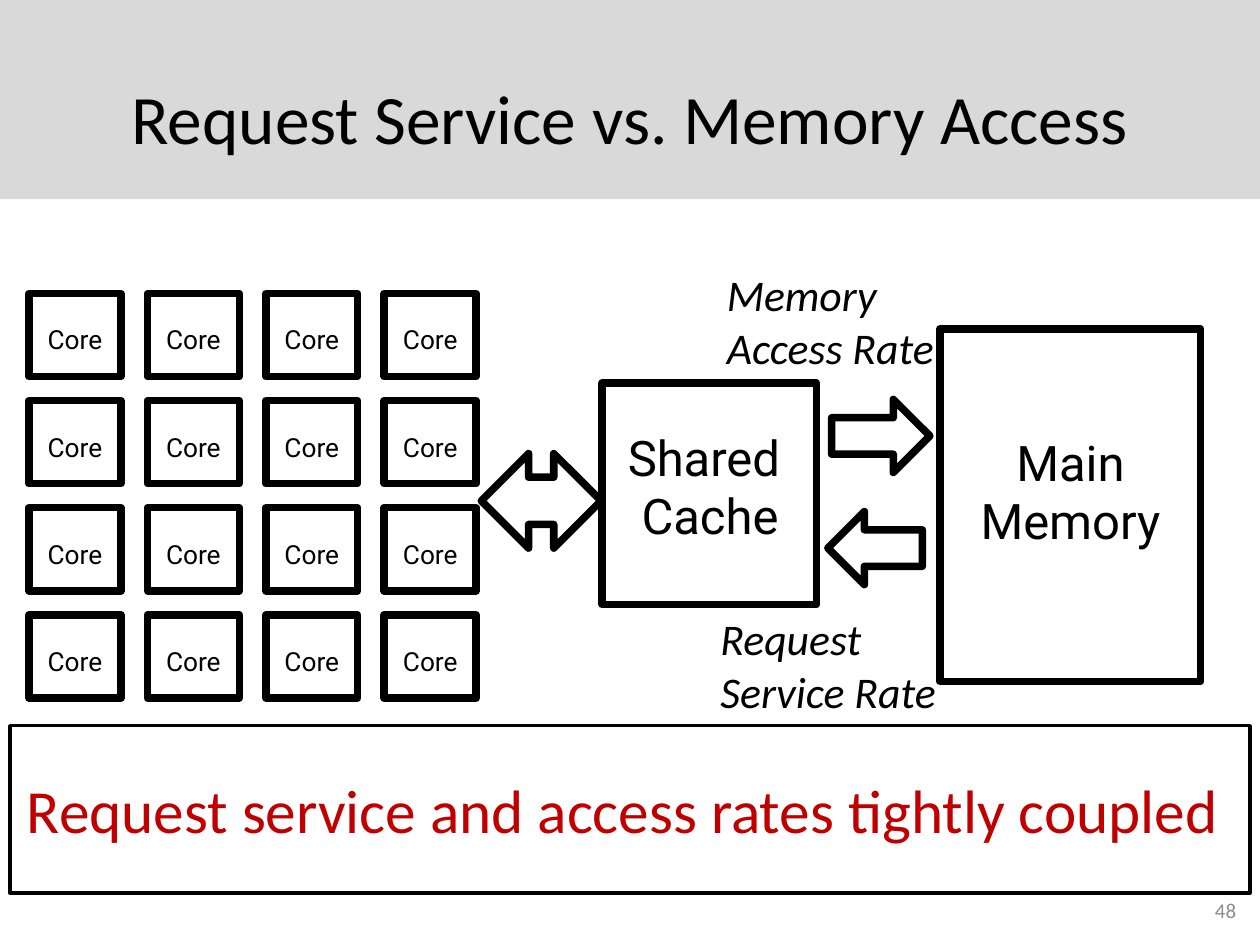
"""Build the slide "Request Service vs. Memory Access"."""
from pptx import Presentation
from pptx.dml.color import RGBColor
from pptx.enum.shapes import MSO_SHAPE
from pptx.enum.text import MSO_ANCHOR, PP_ALIGN
from pptx.util import Inches, Pt

RECT = MSO_SHAPE.RECTANGLE
BOTH_ARROW = MSO_SHAPE.LEFT_RIGHT_ARROW
RIGHT_ARROW = MSO_SHAPE.RIGHT_ARROW
LEFT_ARROW = MSO_SHAPE.LEFT_ARROW
MIDDLE = MSO_ANCHOR.MIDDLE
LEFT, CENTER, RIGHT = PP_ALIGN.LEFT, PP_ALIGN.CENTER, PP_ALIGN.RIGHT
COLORS = {"black": "000000", "white": "FFFFFF", "band": "D9D9D9",
          "red": "C00000", "number": "8C8C8C"}


def add_outline(kind, box, fill=None, line="black", width=4.32):
    sp = s.shapes.add_shape(kind, *map(Inches, box))
    sp.shadow.inherit = False
    if fill:
        sp.fill.solid()
        sp.fill.fore_color.rgb = RGBColor.from_string(COLORS[fill])
    else:
        sp.fill.background()
    if line:
        sp.line.color.rgb = RGBColor.from_string(COLORS[line])
        sp.line.width = Pt(width)
    else:
        sp.line.fill.background()
    return sp


def write_text(sp, text, size, font="Calibri", color="black", align=CENTER, italic=False):
    tf = sp.text_frame
    tf.word_wrap = True
    tf.text = text
    for p in tf.paragraphs:
        p.alignment = align
        p.font.name = font
        p.font.size = Pt(size)
        p.font.italic = italic
        p.font.color.rgb = RGBColor.from_string(COLORS[color])


prs = Presentation()
prs.slide_width, prs.slide_height = Inches(10), Inches(7.5)
s = prs.slides.add_slide(prs.slide_layouts[5])

band = add_outline(RECT, (0, 0, 10, 1.58), "band", None)
s.shapes.title._element.addprevious(band._element)

title = s.shapes.title
title.left, title.top, title.width, title.height = map(Inches, (0.5, 0.3, 9, 1.25))
title.text_frame.vertical_anchor = MIDDLE
write_text(title, "Request Service vs. Memory Access", 39.6)

number = s.shapes.add_textbox(*map(Inches, (7.58, 7.02, 2.33, 0.4)))
number.text_frame.vertical_anchor = MIDDLE
write_text(number, "48", 12, color="number", align=RIGHT)

for row in range(4):
    for col in range(4):
        x, y = 0.23 + 0.94 * col, 2.33 + 0.85 * row
        add_outline(RECT, (x, y, 0.73, 0.66))
        label = s.shapes.add_textbox(*map(Inches, (x, y + 0.19, 0.73, 0.35)))
        write_text(label, "Core", 15, "Roboto")

blocks = [
    ("Main Memory", (7.46, 2.61, 2.07, 2.8), (7.49, 3.38, 2.01, 1.04)),
    ("Shared \nCache", (4.78, 3.04, 1.7, 1.76), (4.81, 3.34, 1.65, 1.04)),
]
for text, box, label_box in blocks:
    add_outline(RECT, box)
    label = s.shapes.add_textbox(*map(Inches, label_box))
    write_text(label, text, 28, "Roboto")

arrows = [
    (BOTH_ARROW, (3.82, 3.6, 0.95, 0.75)),
    (RIGHT_ARROW, (6.6, 3.17, 0.78, 0.58)),
    (LEFT_ARROW, (6.57, 4.06, 0.75, 0.58)),
]
for kind, box in arrows:
    add_outline(kind, box)

rates = [("Memory Access Rate", 5.67, 2.08), ("Request Service Rate", 5.62, 4.81)]
for text, x, y in rates:
    label = s.shapes.add_textbox(*map(Inches, (x, y, 2.17, 0.94)))
    write_text(label, text, 25, align=LEFT, italic=True)

takeaway = add_outline(RECT, (0.08, 5.76, 9.84, 1.33), "white", width=2)
takeaway.text_frame.vertical_anchor = MIDDLE
write_text(takeaway, "Request service and access rates tightly coupled ", 35, color="red")

prs.save("out.pptx")
